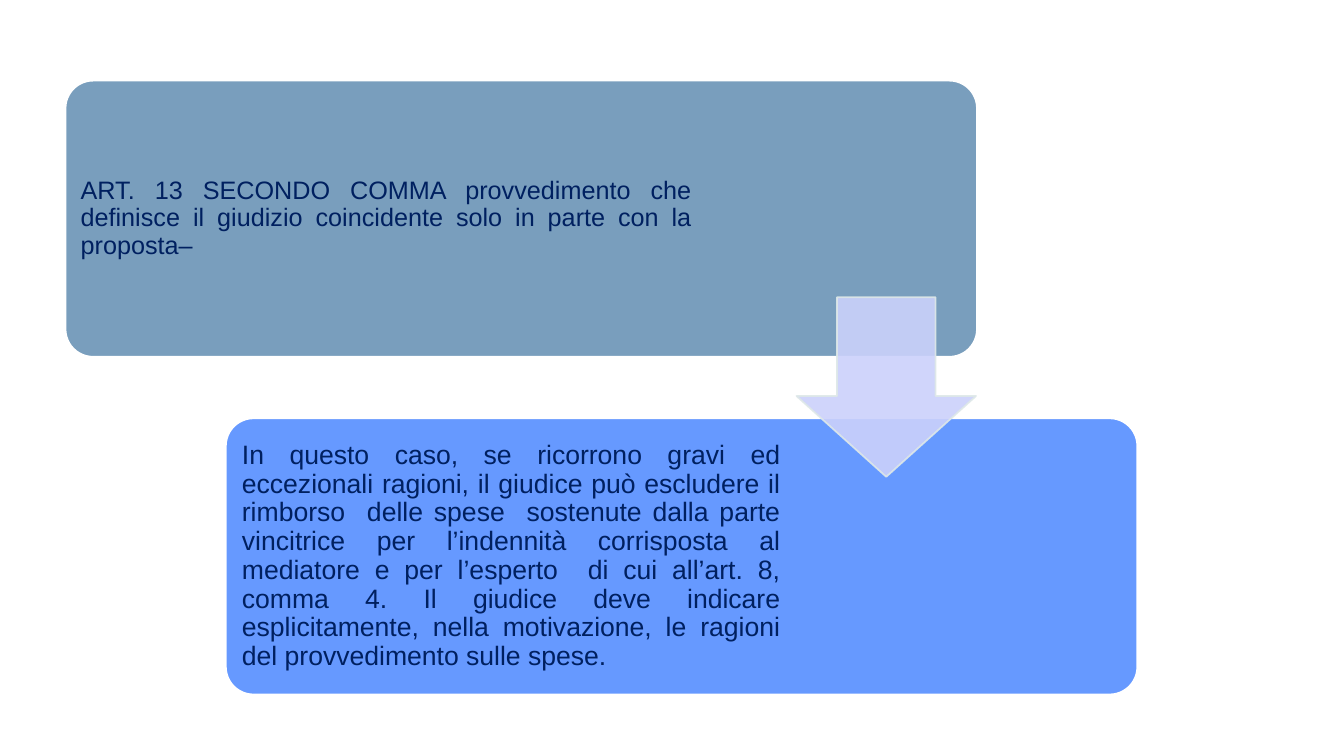
from dataclasses import dataclass

from lxml import etree
from pptx import Presentation
from pptx import util as u
from pptx.dml.color import RGBColor
from pptx.enum import shapes, text
from pptx.oxml.ns import qn


@dataclass(frozen=True)
class Theme:
    font: str = "Arial"
    ink: str = "002060"
    premise: str = "799EBD"
    outcome: str = "6699FF"
    card_line: str = "FFFFFF"
    arrow: str = "CBD1FB"
    arrow_line: str = "DEE8E8"
    premise_size: int = 18
    outcome_size: int = 19
    line_width: float = 1.25


THEME = Theme()
CARD_WIDTH, CARD_HEIGHT = 9.04, 2.74
CARD_PADDING = 0.08

PREMISE = (
    "ART. 13 SECONDO COMMA provvedimento che definisce il giudizio "
    "coincidente solo in parte con la proposta– "
)
OUTCOME = (
    "In questo caso, se ricorrono gravi ed eccezionali ragioni, il giudice può "
    "escludere il rimborso  delle spese  sostenute dalla parte vincitrice per "
    "l’indennità corrisposta al mediatore e per l’esperto  di cui all’art. 8, "
    "comma 4. Il giudice deve indicare esplicitamente, nella motivazione, le "
    "ragioni del provvedimento sulle spese."
)


def set_opacity(block, percent):
    for color in block.element.spPr.iter(qn("a:srgbClr")):
        etree.SubElement(color, qn("a:alpha"), val=str(percent * 1000))


def add_block(slide, preset, box, adjustments, fill, line, opacity=100):
    block = slide.shapes.add_shape(preset, *map(u.Inches, box))
    block.shadow.inherit = False
    for index, value in enumerate(adjustments):
        block.adjustments[index] = value
    block.line.width = u.Pt(THEME.line_width)
    for paint, color in ((block.fill, fill), (block.line.fill, line)):
        paint.solid()
        paint.fore_color.rgb = RGBColor.from_string(color)
    if opacity < 100:
        set_opacity(block, opacity)


def add_text(slide, wording, box, size, inset):
    caption = slide.shapes.add_textbox(*map(u.Inches, box))
    frame = caption.text_frame
    frame.word_wrap = True
    frame.vertical_anchor = text.MSO_ANCHOR.MIDDLE
    frame.margin_left = frame.margin_right = u.Inches(inset)
    frame.margin_top = frame.margin_bottom = u.Inches(inset)
    paragraph = frame.paragraphs[0]
    paragraph.alignment = text.PP_ALIGN.JUSTIFY
    paragraph.line_spacing = 0.9
    run = paragraph.add_run()
    run.text = wording
    run.font.name = THEME.font
    run.font.size = u.Pt(size)
    run.font.color.rgb = RGBColor.from_string(THEME.ink)


def add_card(slide, wording, left, top, fill, text_width, size, inset):
    add_block(slide, shapes.MSO_SHAPE.ROUNDED_RECTANGLE,
              (left, top, CARD_WIDTH, CARD_HEIGHT), [0.1], fill, THEME.card_line)
    text_box = (left + CARD_PADDING, top + CARD_PADDING,
                text_width, CARD_HEIGHT - 2 * CARD_PADDING)
    add_text(slide, wording, text_box, size=size, inset=inset)


def main():
    deck = Presentation()
    deck.slide_width, deck.slide_height = u.Inches(13.33), u.Inches(7.5)
    slide = deck.slides.add_slide(deck.slide_layouts[6])
    add_card(slide, PREMISE, 0.65, 0.8, THEME.premise,
             text_width=6.2, size=THEME.premise_size, inset=0.07)
    add_card(slide, OUTCOME, 2.24, 4.15, THEME.outcome,
             text_width=5.5, size=THEME.outcome_size, inset=0.08)
    add_block(slide, shapes.MSO_SHAPE.DOWN_ARROW, (7.9, 2.95, 1.78, 1.78),
              [0.55, 0.45], THEME.arrow, THEME.arrow_line, opacity=90)
    deck.save("out.pptx")


if __name__ == "__main__":
    main()
